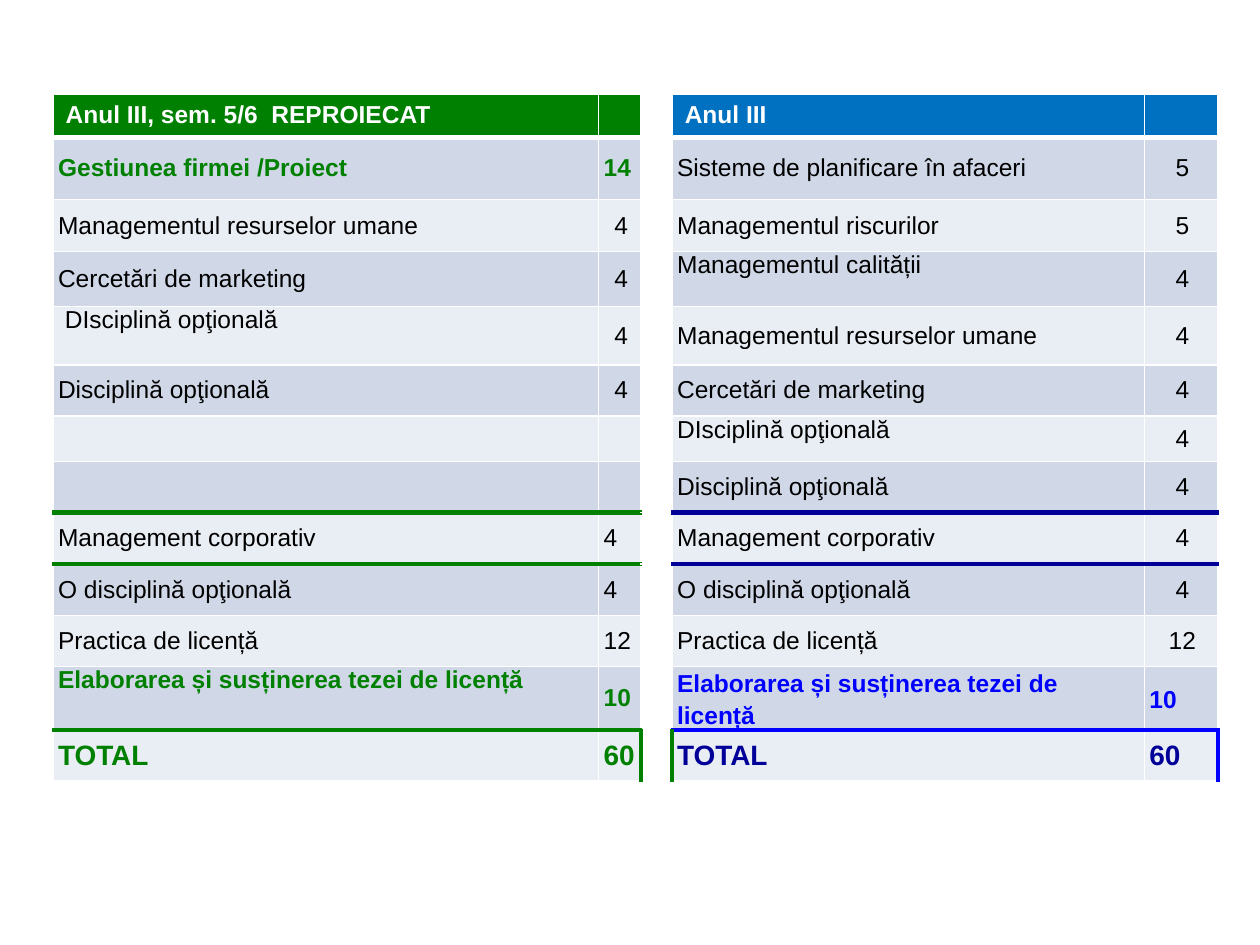
"""Build a slide comparing the redesigned and current third-year curricula."""
from lxml import etree
from pptx import Presentation
from pptx import util as u
from pptx.dml.color import RGBColor
from pptx.enum import text
from pptx.oxml.ns import qn

GREEN, BLUE, NAVY, SKY = "008000", "0000FF", "000099", "0070C0"
WHITE, BLACK = "FFFFFF", "000000"
BANDS = ("E9EDF4", "D0D8E8")

COLUMN_WIDTHS = (11, 0.85, 0.63, 9.52, 1.48)
ROW_HEIGHTS = (0.8, 1.26, 1.04, 1.11, 1.18, 1.03, 0.92, 1.03, 1.03, 1.04, 1.03, 1.27, 1.03)
ROWS = [
    ("Anul III, sem. 5/6  REPROIECAT", "", "", "Anul III", ""),
    ("Gestiunea firmei /Proiect", "14", "", "Sisteme de planificare în afaceri", "5"),
    ("Managementul resurselor umane", "4", "", "Managementul riscurilor", "5"),
    ("Cercetări de marketing", "4", "", "Managementul calității", "4"),
    (" DIsciplină opţională", "4", "", "Managementul resurselor umane", "4"),
    ("Disciplină opţională", "4", "", "Cercetări de marketing", "4"),
    ("", "", "", "DIsciplină opţională", "4"),
    ("", "", "", "Disciplină opţională", "4"),
    ("Management corporativ", "4", "", "Management corporativ", "4"),
    ("O disciplină opţională", "4", "", "O disciplină opţională", "4"),
    ("Practica de licență", "12", "", "Practica de licență", "12"),
    ("Elaborarea și susținerea tezei de licență", "10", "",
     "Elaborarea și susținerea tezei de licență", "10"),
    ("TOTAL", "60", "", "TOTAL", "60"),
]
THESIS, TOTAL, GAP = 11, 12, 2
TOP_ANCHORED = {(3, 3), (4, 0), (6, 3), (THESIS, 0), (THESIS, 3)}
HIGHLIGHTS = {(1, 0): GREEN, (THESIS, 0): GREEN, (THESIS, 1): BLUE,
              (TOTAL, 0): GREEN, (TOTAL, 1): NAVY}
RULES_BELOW = {7: (GREEN, NAVY), 8: (GREEN, NAVY), THESIS: (GREEN, BLUE)}
TOTAL_SIDES = {2: GREEN, 3: GREEN, 5: BLUE}


def color(value):
    return RGBColor.from_string(value)


def line_below(row, column):
    if row == 0:
        return WHITE, 3
    if row in RULES_BELOW and column != GAP:
        return RULES_BELOW[row][column > GAP], 3
    return WHITE, 1


def line_before(row, column):
    if row == TOTAL and column in TOTAL_SIDES:
        return TOTAL_SIDES[column], 3
    return WHITE, 1


def set_borders(cell, row, column):
    borders = {"a:lnL": line_before(row, column), "a:lnR": line_before(row, column + 1),
               "a:lnT": line_below(row - 1, column), "a:lnB": line_below(row, column)}
    properties = cell._tc.get_or_add_tcPr()
    for tag, (value, points) in borders.items():
        line = etree.SubElement(properties, qn(tag), w=str(u.Pt(points)))
        fill = etree.SubElement(line, qn("a:solidFill"))
        etree.SubElement(fill, qn("a:srgbClr"), val=value)


def set_fill(cell, row, column):
    if column == GAP:
        value = WHITE
    elif row == 0:
        value = SKY if column > GAP else GREEN
    else:
        value = BANDS[row % 2]
    cell.fill.solid()
    cell.fill.fore_color.rgb = color(value)


def set_text(cell, row, column, words):
    paragraph = cell.text_frame.paragraphs[0]
    size = 16 if row == TOTAL else 14
    if row:
        cell.margin_left, cell.margin_right = u.Cm(0.1), u.Cm(0.05)
        cell.margin_top = cell.margin_bottom = 0
        if (row, column) not in TOP_ANCHORED:
            cell.vertical_anchor = text.MSO_ANCHOR.MIDDLE
    if not words:
        etree.SubElement(paragraph._p, qn("a:endParaRPr"), sz=str(size * 100))
        return
    highlight = HIGHLIGHTS.get((row, int(column > GAP)))
    run = paragraph.add_run()
    run.text = words
    run.font.name, run.font.size = "Arial", u.Pt(size)
    run.font.bold = row == 0 or highlight is not None
    run.font.color.rgb = color(WHITE if row == 0 else highlight or BLACK)
    if (column == 1 and 2 <= row <= 5) or (column == 4 and 1 <= row < THESIS):
        paragraph.alignment = text.PP_ALIGN.CENTER
    if row == THESIS and column > GAP:
        paragraph.line_spacing = 1.15


def main():
    presentation = Presentation()
    presentation.slide_width, presentation.slide_height = u.Cm(25.4), u.Cm(19.05)
    slide = presentation.slides.add_slide(presentation.slide_layouts[6])
    table = slide.shapes.add_table(
        len(ROWS), len(COLUMN_WIDTHS), u.Cm(1.07), u.Cm(1.91),
        u.Cm(sum(COLUMN_WIDTHS)), u.Cm(sum(ROW_HEIGHTS))).table
    for column, width in zip(table.columns, COLUMN_WIDTHS):
        column.width = u.Cm(width)
    for row, height in zip(table.rows, ROW_HEIGHTS):
        row.height = u.Cm(height)
    for row, entries in enumerate(ROWS):
        for column, words in enumerate(entries):
            cell = table.cell(row, column)
            set_borders(cell, row, column)
            set_fill(cell, row, column)
            set_text(cell, row, column, words)
    presentation.save("out.pptx")


if __name__ == "__main__":
    main()
